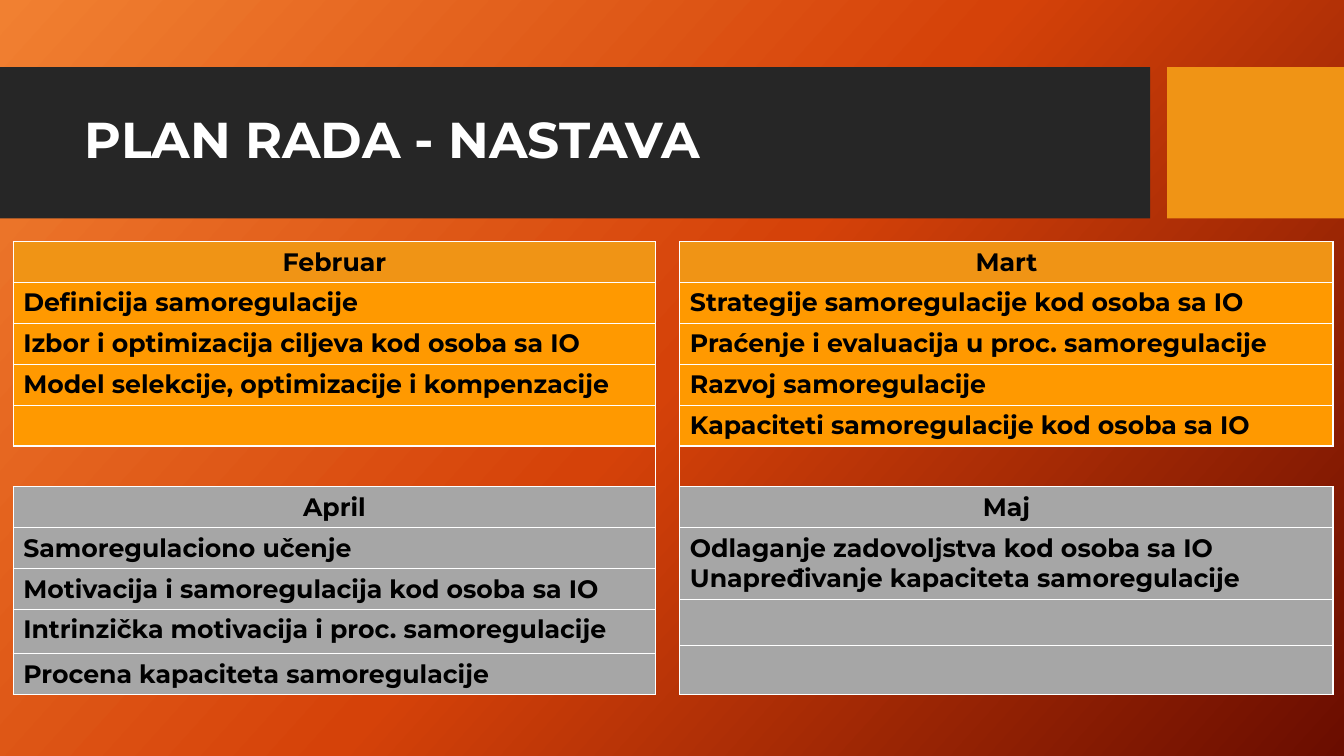
import pptx
import pptx.util
import pptx.dml.color
import pptx.oxml
import pptx.oxml.ns
import pptx.enum.shapes
import pptx.enum.text

Pt = pptx.util.Pt
FONT = "Montserrat"
TITLE = "PLAN RADA - NASTAVA"
STOPS = [(0, "F18031"), (50, "D54209"), (100, "6A0D00")]
ANGLE = 42

# Bars: left, top, width, height, fill
BARS = [(0, 48, 821.5, 108, "262626"), (833.75, 48, 126.25, 108, "F09415")]

# Table: column widths, row heights
COLS = [459, 17, 466.5]
ROWS = [29.2] * 8 + [22, 7.2, 25.6, 6, 29.2]
LEFT, TOP = 9.4, 172.6
HEAD, WARM, GREY = "F09415", "FF9900", "A6A6A6"

# Months: column, head fill, body fill, cells as (row, rows spanned, lines)
MONTHS = [
    (0, HEAD, WARM, [
        (0, 1, ["Februar"]),
        (1, 1, ["Definicija samoregulacije"]),
        (2, 1, ["Izbor i optimizacija ciljeva kod osoba sa IO"]),
        (3, 1, ["Model selekcije, optimizacije i kompenzacije"]),
        (4, 1, [])]),
    (2, HEAD, WARM, [
        (0, 1, ["Mart"]),
        (1, 1, ["Strategije samoregulacije kod osoba sa IO"]),
        (2, 1, ["Praćenje i evaluacija u proc. samoregulacije"]),
        (3, 1, ["Razvoj samoregulacije"]),
        (4, 1, ["Kapaciteti samoregulacije kod osoba sa IO"])]),
    (0, GREY, GREY, [
        (6, 1, ["April"]),
        (7, 1, ["Samoregulaciono učenje"]),
        (8, 2, ["Motivacija i samoregulacija kod osoba sa IO"]),
        (10, 2, ["Intrinzička motivacija i proc. samoregulacije"]),
        (12, 1, ["Procena kapaciteta samoregulacije"])]),
    (2, GREY, GREY, [
        (6, 1, ["Maj"]),
        (7, 2, ["Odlaganje zadovoljstva kod osoba sa IO",
                "Unapređivanje kapaciteta samoregulacije"]),
        (9, 2, []),
        (11, 2, [])]),
]


def color(code):
    return pptx.dml.color.RGBColor.from_string(code)


def paint(item, code):
    item.fill.solid()
    item.fill.fore_color.rgb = color(code)


def write(para, text, size, code):
    run = para.add_run()
    run.text = text
    run.font.name = FONT
    run.font.size = Pt(size)
    run.font.bold = True
    run.font.color.rgb = color(code)


def edge(cell, sides):
    """Put white one-point borders on the given sides, in L R T B order."""
    props = cell._tc.get_or_add_tcPr()
    for spot, side in enumerate(sides):
        props.insert(spot, pptx.oxml.parse_xml(
            f'<a:ln{side} {pptx.oxml.ns.nsdecls("a")} w="12700"><a:solidFill>'
            f'<a:srgbClr val="FFFFFF"/></a:solidFill></a:ln{side}>'))


deck = pptx.Presentation()
deck.slide_width, deck.slide_height = Pt(960), Pt(540)
slide = deck.slides.add_slide(deck.slide_layouts[6])

# Background gradient
stops = "".join(f'<a:gs pos="{pos * 1000}"><a:srgbClr val="{code}"/></a:gs>'
                for pos, code in STOPS)
slide._element.cSld.insert(0, pptx.oxml.parse_xml(
    f'<p:bg {pptx.oxml.ns.nsdecls("p", "a")}><p:bgPr><a:gradFill>'
    f'<a:gsLst>{stops}</a:gsLst><a:lin ang="{ANGLE * 60000}" scaled="0"/>'
    f'</a:gradFill><a:effectLst/></p:bgPr></p:bg>'))

# Title band
for x, y, w, h, code in BARS:
    bar = slide.shapes.add_shape(pptx.enum.shapes.MSO_SHAPE.RECTANGLE,
                                 Pt(x), Pt(y), Pt(w), Pt(h))
    bar.shadow.inherit = False
    paint(bar, code)
    bar.line.fill.background()

box = slide.shapes.add_textbox(Pt(53.5), Pt(59), Pt(757), Pt(85))
frame = box.text_frame
frame.word_wrap = True
frame.vertical_anchor = pptx.enum.text.MSO_ANCHOR.MIDDLE
frame.paragraphs[0].line_spacing = 0.9
write(frame.paragraphs[0], TITLE, 36, "FFFFFF")

# Plan table, without style
holder = slide.shapes.add_table(len(ROWS), len(COLS), Pt(LEFT), Pt(TOP),
                                Pt(sum(COLS)), Pt(sum(ROWS)))
table = holder.table
table.first_row = table.horz_banding = False
style = table._tbl.tblPr.find(pptx.oxml.ns.qn("a:tableStyleId"))
style.text = "{2D5ABB26-0587-4C30-8999-92F81FD0307C}"
for col, width in zip(table.columns, COLS):
    col.width = Pt(width)
for row, height in zip(table.rows, ROWS):
    row.height = Pt(height)

table.cell(0, 1).merge(table.cell(len(ROWS) - 1, 1))
for col, head, body, cells in MONTHS:
    for order, (row, span, lines) in enumerate(cells):
        cell = table.cell(row, col)
        if span > 1:
            cell.merge(table.cell(row + span - 1, col))
        for step in range(span):
            part = table.cell(row + step, col)
            paint(part, body if order else head)
            edge(part, "LRTB" if step == 0 else "LRB")
        for num, line in enumerate(lines):
            frame = cell.text_frame
            para = frame.add_paragraph() if num else frame.paragraphs[0]
            if order == 0:
                para.alignment = pptx.enum.text.PP_ALIGN.CENTER
            write(para, line, 18, "000000")

# Gap row between the month pairs
for col in (0, 2):
    edge(table.cell(5, col), "TB")

deck.save("out.pptx")
